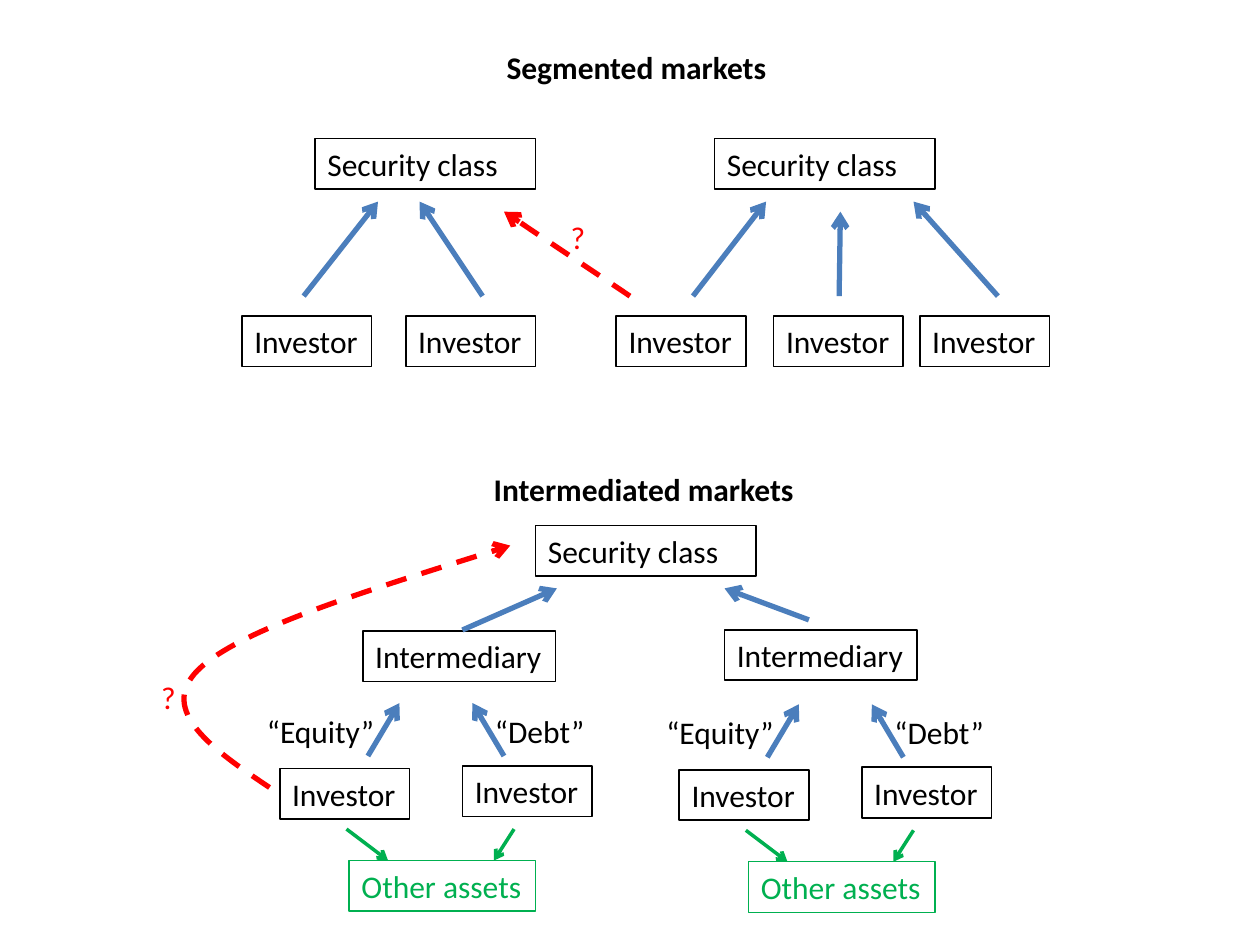
from lxml.etree import SubElement
from pptx import Presentation
from pptx.dml.color import RGBColor
from pptx.enum.dml import MSO_LINE_DASH_STYLE as Dash
from pptx.enum.shapes import MSO_CONNECTOR as Connector, MSO_SHAPE as Preset
from pptx.enum.text import MSO_ANCHOR as Anchor, MSO_AUTO_SIZE as AutoSize, PP_ALIGN as Align
from pptx.oxml.ns import qn
from pptx.util import Inches, Pt

COLORS = {"ink": "000000", "flow": "4B7EBC", "doubt": "FF0000", "assets": "00B050"}
WIDTH, HEIGHT = 10, 7.5
ROW = 0.4
INVESTOR, SECURITY, INTERMEDIARY, ASSETS = 1.03, 1.75, 1.53, 1.48


def color(name):
    """Return the named colour of the palette."""
    return RGBColor.from_string(COLORS[name])


def write(shape, text, tone="ink", bold=False, wrap=False):
    """Put one left-aligned line of text into a shape."""
    frame = shape.text_frame
    frame.word_wrap = wrap
    frame.auto_size = AutoSize.SHAPE_TO_FIT_TEXT
    frame.vertical_anchor = Anchor.TOP
    para = frame.paragraphs[0]
    para.alignment = Align.LEFT
    span = para.add_run()
    span.text = text
    span.font.name = "Calibri"
    span.font.size = Pt(18)
    span.font.bold = bold
    span.font.color.rgb = color(tone)


def add_label(slide, text, left, top, width, tone="ink", bold=False):
    """Add a line of text without a frame."""
    box = slide.shapes.add_textbox(*map(Inches, (left, top, width, ROW)))
    write(box, text, tone, bold)


def add_box(slide, text, left, top, width, tone="ink", weight=1, wrap=False):
    """Add an outlined box with a line of text."""
    box = slide.shapes.add_shape(Preset.RECTANGLE, *map(Inches, (left, top, width, ROW)))
    box.shadow.inherit = False
    box.fill.background()
    box.line.color.rgb = color(tone)
    box.line.width = Pt(weight)
    write(box, text, tone, wrap=wrap)


def style_arrow(shape, tone, weight, dashed):
    """Give a line its colour, width, dashes and arrowhead."""
    line = shape.line
    line.color.rgb = color(tone)
    line.width = Pt(weight)
    if dashed:
        line.dash_style = Dash.DASH
    SubElement(line._get_or_add_ln(), qn("a:tailEnd"), type="arrow")


def add_arrow(slide, start, end, tone="flow", weight=3, dashed=False):
    """Add a straight arrow."""
    arrow = slide.shapes.add_connector(Connector.STRAIGHT, *map(Inches, (*start, *end)))
    style_arrow(arrow, tone, weight, dashed)
    SubElement(arrow._element.spPr, qn("a:effectLst"))


def add_curve(slide, points, tone):
    """Add a dashed arrow along cubic curves, with control points in hundredths of an inch."""
    builder = slide.shapes.build_freeform(*points[0], scale=Inches(0.01))
    builder.add_line_segments(points[1:], close=False)
    curve = builder.convert_to_shape()
    curve.shadow.inherit = False
    curve.fill.background()
    outline = curve._element.spPr.find(".//" + qn("a:path"))
    steps = outline.findall(qn("a:lnTo"))
    for first in range(0, len(steps), 3):
        cubic = SubElement(outline, qn("a:cubicBezTo"))
        for step in steps[first:first + 3]:
            cubic.append(step[0])
            outline.remove(step)
    style_arrow(curve, tone, 3, True)


def add_title(slide, text, left, top, width):
    """Move the title placeholder and fill it."""
    title = slide.shapes.title
    title.left, title.top, title.width, title.height = map(Inches, (left, top, width, ROW))
    write(title, text, bold=True)


def add_segmented(slide):
    """Draw separate groups of investors, each with its own security class."""
    add_title(slide, "Segmented markets", 3.92, 0.33, 2.28)
    for left in (2.5, 5.67):
        add_box(slide, "Security class", left, 1.1, SECURITY, wrap=True)
    for left in (1.92, 3.22, 4.89, 6.14, 7.3):
        add_box(slide, "Investor", left, 2.51, INVESTOR)
    for start, end, tip in ((2.41, 3, 1.6), (3.83, 3.33, 1.6), (5.5, 6.08, 1.6),
                            (6.66, 6.67, 1.68), (7.92, 7.25, 1.6)):
        add_arrow(slide, (start, 2.35), (end, tip))
    add_arrow(slide, (5, 2.35), (4, 1.68), "doubt", dashed=True)
    add_label(slide, "?", 4.43, 1.68, 0.32, "doubt")


def add_funding(slide, x, y):
    """Draw the investors that fund one intermediary, offset by x and y."""
    for text, left, width in (("“Equity”", 2.02, 1.06), ("“Debt”", 3.83, 0.92)):
        add_label(slide, text, left + x, 5.6 + y, width)
    for left, top in ((2.22, 6.1), (3.67, 6.08)):
        add_box(slide, "Investor", left + x, top + y, INVESTOR)
    for start, end in ((2.92, 3.17), (4, 3.75)):
        add_arrow(slide, (start + x, 6 + y), (end + x, 5.58 + y))
    for start, end in ((2.75, 3.08), (4.08, 3.92)):
        add_arrow(slide, (start + x, 6.58 + y), (end + x, 6.83 + y), "assets", 2)
    add_box(slide, "Other assets", 2.77 + x, 6.83 + y, ASSETS, "assets", 0.75)


def add_intermediated(slide):
    """Draw intermediaries between the investors and one security class."""
    add_label(slide, "Intermediated markets", 3.82, 3.68, 2.6, bold=True)
    add_box(slide, "Security class", 4.25, 4.17, SECURITY, wrap=True)
    for left, top in ((2.88, 5.01), (5.75, 5)):
        add_box(slide, "Intermediary", left, top, INTERMEDIARY)
    add_arrow(slide, (3.67, 5), (4.42, 4.67))
    add_arrow(slide, (6.42, 4.92), (5.75, 4.67))
    for x, y in ((0, 0), (3.17, 0.01)):
        add_funding(slide, x, y)
    add_curve(slide, [(214, 625), (169, 595), (125, 564), (157, 532),
                      (189, 500), (297, 467), (405, 433)], "doubt")
    add_label(slide, "?", 1.18, 5.33, 0.32, "doubt")


def main():
    """Build the slide and save it."""
    deck = Presentation()
    deck.slide_width, deck.slide_height = Inches(WIDTH), Inches(HEIGHT)
    page = deck.slides.add_slide(deck.slide_layouts.get_by_name("Title Only"))
    add_segmented(page)
    add_intermediated(page)
    deck.save("out.pptx")


if __name__ == "__main__":
    main()
